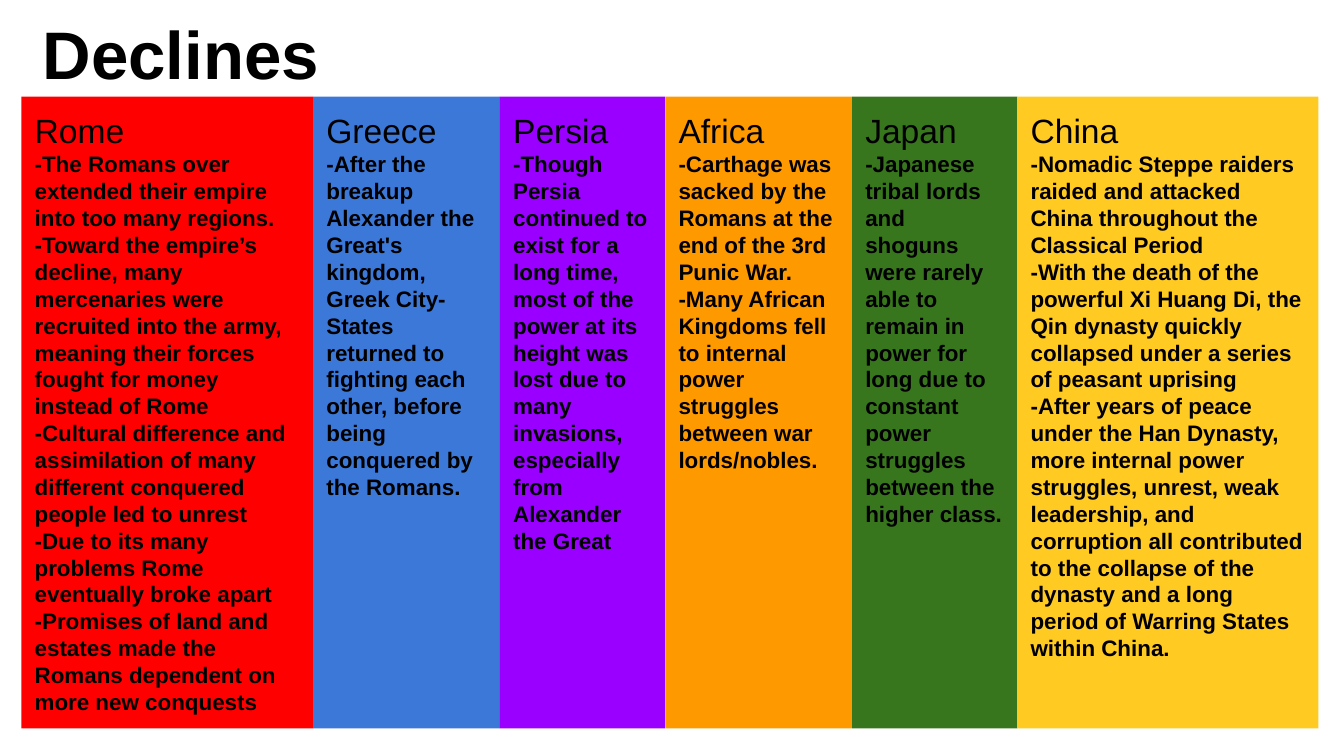
import pptx
import pptx.dml.color
import pptx.enum.shapes
import pptx.enum.text
import pptx.util

Inches = pptx.util.Inches
Pt = pptx.util.Pt
RGBColor = pptx.dml.color.RGBColor

BLACK = RGBColor(0x00, 0x00, 0x00)
RED = RGBColor(0xFF, 0x00, 0x00)
BLUE = RGBColor(0x3C, 0x78, 0xD8)
PURPLE = RGBColor(0x99, 0x00, 0xFF)
ORANGE = RGBColor(0xFF, 0x99, 0x00)
GREEN = RGBColor(0x38, 0x76, 0x1D)
YELLOW = RGBColor(0xFF, 0xCA, 0x22)

LEFT, TOP, HEIGHT = 0.16, 0.72, 4.7

COLUMNS = [
    ("Rome", 2.17, RED, [
        "-The Romans over extended their empire into too many regions.",
        "-Toward the empire’s decline, many mercenaries were recruited into the army, "
        "meaning their forces fought for money instead of Rome",
        "-Cultural difference and assimilation of many different conquered people led to unrest",
        "-Due to its many problems Rome eventually broke apart",
        "-Promises of land and estates made the Romans dependent on more new conquests",
    ]),
    ("Greece", 1.39, BLUE, [
        "-After the breakup Alexander the Great's kingdom, Greek City-States returned to "
        "fighting each other, before being conquered by the Romans.",
    ]),
    ("Persia", 1.23, PURPLE, [
        "-Though Persia continued to exist for a long time, most of the power at its height "
        "was lost due to many invasions, especially from Alexander the Great",
    ]),
    ("Africa", 1.39, ORANGE, [
        "-Carthage was sacked by the Romans at the end of the 3rd Punic War.",
        "-Many African Kingdoms fell to internal power struggles between war lords/nobles.",
    ]),
    ("Japan", 1.23, GREEN, [
        "-Japanese tribal lords and shoguns were rarely able to remain in power for long "
        "due to constant power struggles between the higher class.",
    ]),
    ("China", 2.24, YELLOW, [
        "-Nomadic Steppe raiders raided and attacked China throughout the Classical Period",
        "-With the death of the powerful Xi Huang Di, the Qin dynasty quickly collapsed "
        "under a series of peasant uprising",
        "-After years of peace under the Han Dynasty, more internal power struggles, unrest, "
        "weak leadership, and corruption all contributed to the collapse of the dynasty "
        "and a long period of Warring States within China.",
    ]),
]


class SlideBuilder:
    """Draws styled elements on the current slide."""

    font = "Arial"
    inset = Inches(0.1)

    def __init__(self, slide):
        self.slide = slide

    def frame(self, sp, anchor):
        tf = sp.text_frame
        tf.word_wrap = True
        tf.vertical_anchor = anchor
        tf.margin_left = tf.margin_right = self.inset
        tf.margin_top = tf.margin_bottom = self.inset
        return tf

    def paragraph(self, p, text, size, bold):
        p.text = text
        p.alignment = pptx.enum.text.PP_ALIGN.LEFT
        for r in p.runs:
            r.font.name = self.font
            r.font.size = Pt(size)
            r.font.bold = bold
            r.font.color.rgb = BLACK

    def title(self, text, x, y, w, h):
        sp = self.slide.shapes.add_textbox(Inches(x), Inches(y), Inches(w), Inches(h))
        tf = self.frame(sp, pptx.enum.text.MSO_ANCHOR.BOTTOM)
        self.paragraph(tf.paragraphs[0], text, 36, True)

    def column(self, heading, points, color, x, y, w, h):
        sp = self.slide.shapes.add_shape(
            pptx.enum.shapes.MSO_SHAPE.RECTANGLE, Inches(x), Inches(y), Inches(w), Inches(h))
        sp.shadow.inherit = False
        sp.fill.solid()
        sp.fill.fore_color.rgb = color
        sp.line.fill.background()
        tf = self.frame(sp, pptx.enum.text.MSO_ANCHOR.TOP)
        self.paragraph(tf.paragraphs[0], heading, 18, False)
        for point in points:
            self.paragraph(tf.add_paragraph(), point, 12, True)


def main():
    prs = pptx.Presentation()
    prs.slide_width = Inches(10)
    prs.slide_height = prs.slide_width * 9 // 16
    s = SlideBuilder(prs.slides.add_slide(prs.slide_layouts[6]))
    s.title("Declines", 0.22, 0.07, 9, 0.72)
    x = LEFT
    for heading, width, color, points in COLUMNS:
        s.column(heading, points, color, x, TOP, width, HEIGHT)
        x += width
    prs.save("out.pptx")


if __name__ == "__main__":
    main()
